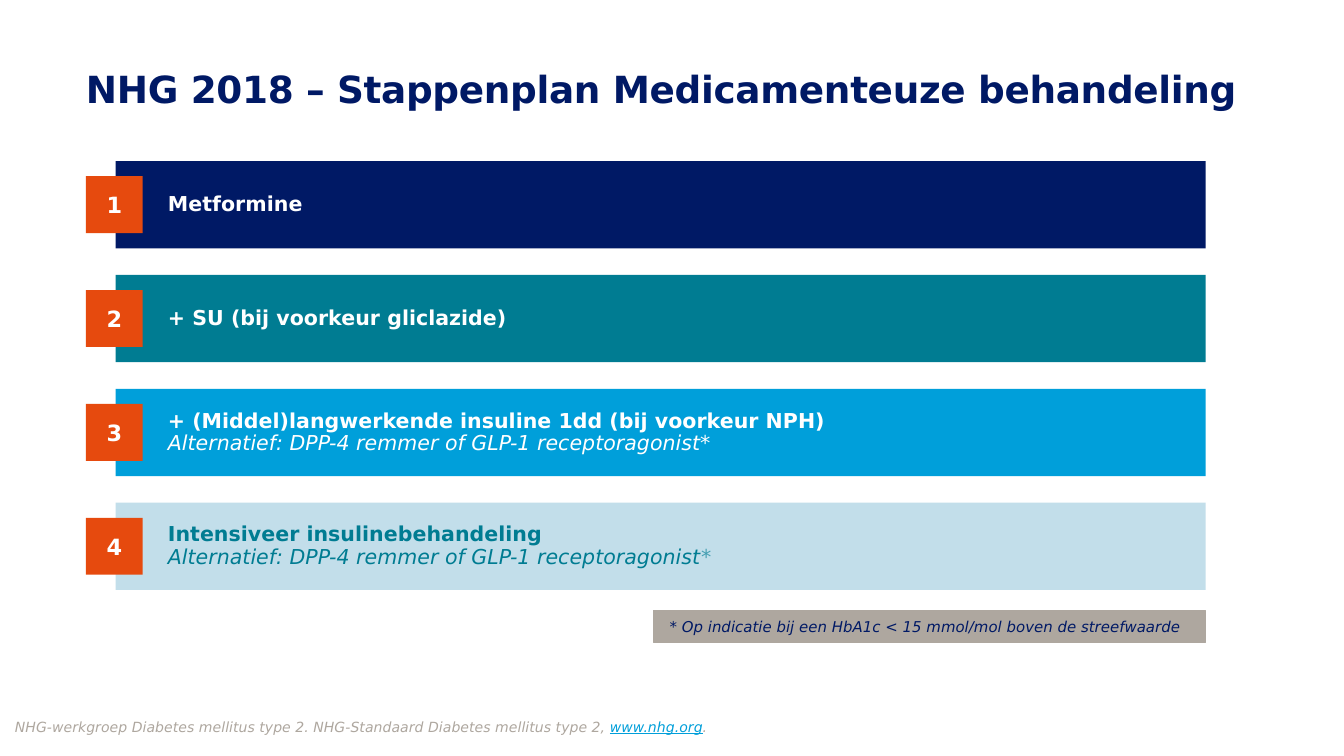
from dataclasses import dataclass

from pptx import Presentation
from pptx.dml.color import RGBColor
from pptx.enum.shapes import MSO_SHAPE
from pptx.enum.text import MSO_ANCHOR, PP_ALIGN
from pptx.util import Pt

RECT = MSO_SHAPE.RECTANGLE
TOP, MIDDLE = MSO_ANCHOR.TOP, MSO_ANCHOR.MIDDLE
LEFT, CENTER = PP_ALIGN.LEFT, PP_ALIGN.CENTER


@dataclass(frozen=True)
class Theme:
    font: str = "DejaVu Sans"
    navy: str = "001965"
    teal: str = "007C92"
    blue: str = "009FDA"
    pale: str = "C2DEEA"
    light_teal: str = "459FB2"
    orange: str = "E64A0E"
    grey: str = "AEA79F"
    white: str = "FFFFFF"
    title: float = 20
    badge: float = 12
    body: float = 11
    note: float = 8
    source: float = 7.5


T = Theme()
ALTERNATIVE = "Alternatief: DPP-4 remmer of GLP-1 receptoragonist"

# Heading, alternative shown, bar colour, text colour, asterisk colour
STEPS = [
    ("Metformine", False, T.navy, T.white, T.white),
    ("+ SU (bij voorkeur gliclazide)", False, T.teal, T.white, T.white),
    ("+ (Middel)langwerkende insuline 1dd (bij voorkeur NPH)", True,
     T.blue, T.white, T.white),
    ("Intensiveer insulinebehandeling", True, T.pale, T.teal, T.light_teal),
]


def set_frame(tf, insets, anchor=MIDDLE, wrap=True):
    tf.margin_left, tf.margin_top, tf.margin_right, tf.margin_bottom = map(Pt, insets)
    tf.vertical_anchor = anchor
    tf.word_wrap = wrap


def add_run(p, text, size, color, bold=False, italic=False, underline=False):
    r = p.add_run()
    r.text = text
    font = r.font
    font.name, font.size = T.font, Pt(size)
    font.bold, font.italic, font.underline = bold, italic, underline
    font.color.rgb = RGBColor.from_string(color)
    return r


def add_block(s, box, fill, align=LEFT):
    sp = s.shapes.add_shape(RECT, *map(Pt, box))
    sp.shadow.inherit = False
    sp.fill.solid()
    sp.fill.fore_color.rgb = RGBColor.from_string(fill)
    sp.line.fill.background()
    sp.text_frame.paragraphs[0].alignment = align
    return sp


def add_title(s, box, text):
    sp = s.shapes.title
    sp.left, sp.top, sp.width, sp.height = map(Pt, box)
    set_frame(sp.text_frame, (0, 0, 0, 0), TOP)
    p = sp.text_frame.paragraphs[0]
    p.alignment, p.line_spacing = LEFT, 0.8
    r = add_run(p, text, T.title, T.navy, bold=True)
    r.font._element.set("spc", "-20")


def add_step(s, box, number, step):
    """A bar with a number badge that overhangs the left edge of the box."""
    heading, alternative, fill, color, star_color = step
    left, top, width, height = box
    overhang, side = 16, 30.5

    # Bar
    tf = add_block(s, (left + overhang, top, width - overhang, height), fill).text_frame
    set_frame(tf, (28, 8.5, 8.5, 8.5))
    p = tf.paragraphs[0]
    p.line_spacing = 0.9
    add_run(p, heading, T.body, color, bold=True)
    if alternative:
        p = tf.add_paragraph()
        p.alignment, p.line_spacing = LEFT, 0.9
        add_run(p, ALTERNATIVE, T.body, color, italic=True)
        add_run(p, "*", T.body, star_color, italic=True)

    # Badge
    badge_top = top + (height - side) / 2
    tf = add_block(s, (left, badge_top, side, side), T.orange, CENTER).text_frame
    set_frame(tf, (0, 0, 0, 0), wrap=False)
    add_run(tf.paragraphs[0], str(number), T.badge, T.white, bold=True)


def add_steps(s, box):
    left, top, width, height = box
    bar = 46.8
    pitch = (height - bar) / (len(STEPS) - 1)
    for i, step in enumerate(STEPS):
        add_step(s, (left, top + i * pitch, width, bar), i + 1, step)


def add_note(s, box, text):
    sp = add_block(s, box, T.grey)
    sp.line.color.rgb = RGBColor.from_string(T.grey)
    sp.line.width = Pt(0.75)
    set_frame(sp.text_frame, (8.5, 5.5, 8.5, 5.5))
    add_run(sp.text_frame.paragraphs[0], text, T.note, T.navy, italic=True)


def add_source(s, box):
    tf = s.shapes.add_textbox(*map(Pt, box)).text_frame
    set_frame(tf, (8, 0, 8, 0))
    p = tf.paragraphs[0]
    p.line_spacing = 0.9
    add_run(p, "NHG-werkgroep Diabetes mellitus type 2. NHG-Standaard Diabetes mellitus type 2, ",
            T.source, T.grey, italic=True)
    add_run(p, "www.nhg.org", T.source, T.blue, italic=True, underline=True)
    add_run(p, ".", T.source, T.grey, italic=True)


def main():
    prs = Presentation()
    prs.slide_width, prs.slide_height = Pt(720), Pt(405)
    s = prs.slides.add_slide(prs.slide_layouts[5])
    add_title(s, (46, 40.3, 628, 51), "NHG 2018 – Stappenplan Medicamenteuze behandeling")
    add_steps(s, (46, 86.3, 600, 229.8))
    add_note(s, (350.2, 327.2, 295.5, 17),
             "* Op indicatie bij een HbA1c < 15 mmol/mol boven de streefwaarde")
    add_source(s, (0, 378, 457, 24))
    prs.save("out.pptx")


if __name__ == "__main__":
    main()
